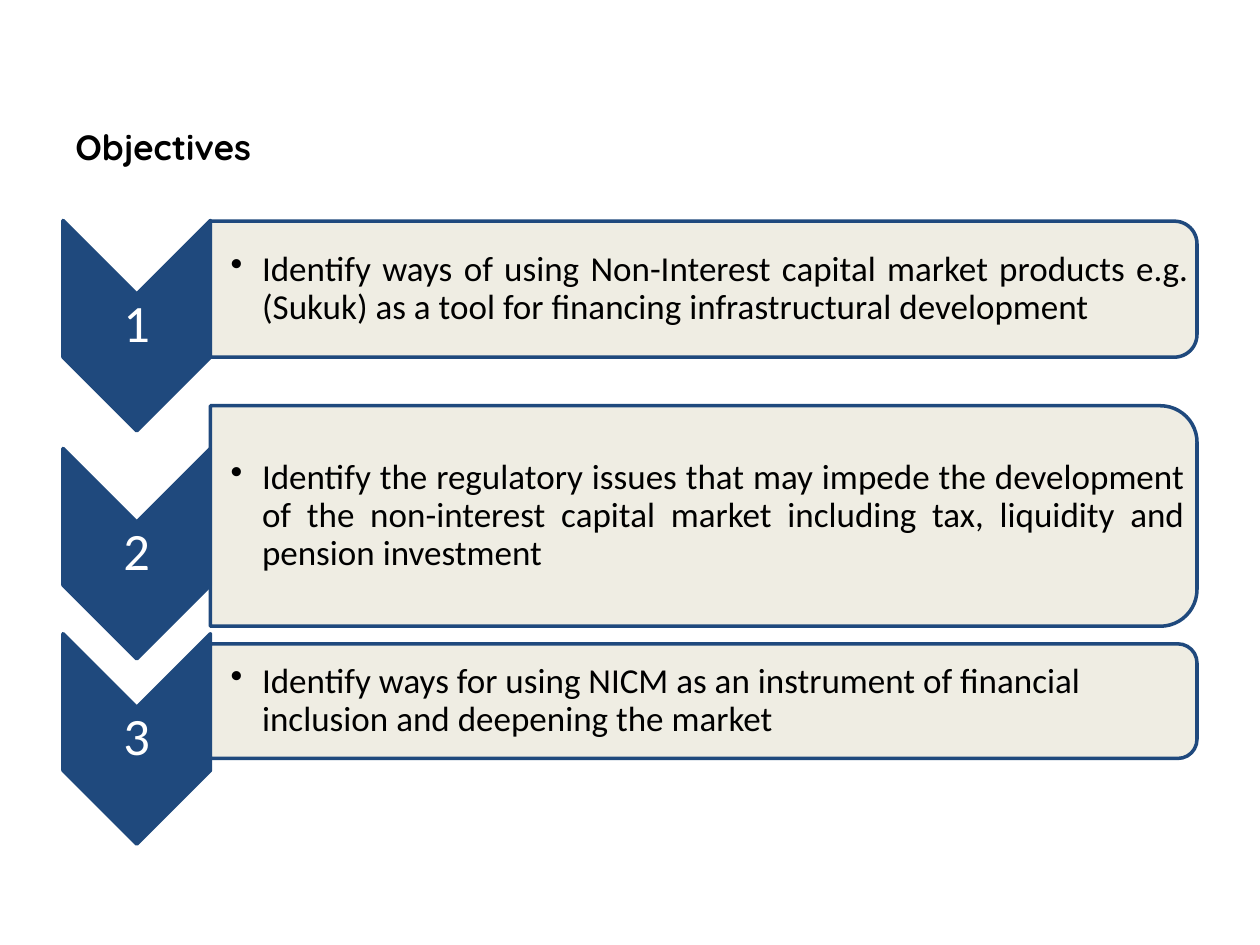
from lxml import etree
from pptx import Presentation
from pptx.dml.color import RGBColor
from pptx.enum import shapes, text
from pptx.oxml.ns import qn
from pptx import util as u

COLS, ROWS = 100, 75
NAVY, CREAM, WHITE, BLACK = "1F497D", "EEECE1", "FFFFFF", "000000"
NUMBER = {"size": u.Pt(30), "name": "Calibri"}
BODY = {"size": u.Pt(20), "name": "Calibri"}
HEADING = {"size": u.Pt(20), "name": "Quicksand", "bold": True}
LEFT, CHEVRON_W, CHEVRON_H, PANEL_W = 5, 11.7, 16.7, 78.3
JUSTIFY, PLAIN = text.PP_ALIGN.JUSTIFY, text.PP_ALIGN.LEFT

OBJECTIVES = [
    (17.5, 17.55, 10.8, JUSTIFY,
     "Identify ways of using Non-Interest capital market products e.g. "
     "(Sukuk) as a tool for financing infrastructural development"),
    (35.6, 32.2, 17.5, JUSTIFY,
     "Identify the regulatory issues that may impede the development of the "
     "non-interest capital market including tax, liquidity and pension investment"),
    (50.3, 51.1, 9.1, PLAIN,
     "Identify ways for using NICM as an instrument of financial inclusion "
     "and deepening the market"),
]


def rgb(value):
    return RGBColor.from_string(value)


class Deck:
    def __init__(self, prs):
        self.s = prs.slides.add_slide(prs.slide_layouts[6])
        self.col = prs.slide_width / COLS
        self.row = prs.slide_height / ROWS

    def box(self, x, y, w, h):
        return [round(v) for v in (x * self.col, y * self.row, w * self.col, h * self.row)]

    def turned(self, kind, x, y, w, h, fill, alpha=None):
        left, top = x + (w - h) / 2, y + (h - w) / 2
        sp = self.s.shapes.add_shape(kind, *self.box(left, top, h, w))
        sp.rotation = 90
        sp.shadow.inherit = False
        sp.fill.solid()
        sp.fill.fore_color.rgb = rgb(fill)
        sp.line.color.rgb = rgb(NAVY)
        sp.line.width = u.Pt(2)
        if alpha:
            clr = sp.fill._xPr.find(qn("a:solidFill"))[0]
            etree.SubElement(clr, qn("a:alpha"), val=str(alpha * 1000))

    def label(self, words, x, y, w, h, font, color, align=PLAIN,
              insets=(0.1, 0.05, 0.1, 0.05), spacing=1.0, bullet=False):
        tf = self.s.shapes.add_textbox(*self.box(x, y, w, h)).text_frame
        tf.word_wrap = True
        tf.vertical_anchor = text.MSO_ANCHOR.MIDDLE
        for side, inset in zip(("left", "top", "right", "bottom"), insets):
            setattr(tf, f"margin_{side}", u.Inches(inset))
        p = tf.paragraphs[0]
        p.alignment = align
        p.line_spacing = spacing
        if bullet:
            pPr = p._p.get_or_add_pPr()
            pPr.set("marL", str(u.Inches(0.25)))
            pPr.set("indent", str(u.Inches(-0.25)))
            etree.SubElement(pPr, qn("a:buChar"), char="•")
        r = p.add_run()
        r.text = words
        r.font.color.rgb = rgb(color)
        for key, value in font.items():
            setattr(r.font, key, value)

    def marker(self, number, y):
        self.turned(shapes.MSO_SHAPE.CHEVRON, LEFT, y, CHEVRON_W, CHEVRON_H, NAVY)
        self.label(str(number), LEFT, y + CHEVRON_W / 2, CHEVRON_W, CHEVRON_H - CHEVRON_W,
                   NUMBER, WHITE, text.PP_ALIGN.CENTER, (0.02,) * 4, 0.9)

    def panel(self, words, y, h, align):
        x, pad = LEFT + CHEVRON_W, h * 0.05
        self.turned(shapes.MSO_SHAPE.ROUND_2_SAME_RECTANGLE, x, y, PANEL_W, h, CREAM, 90)
        self.label(words, x, y + pad, PANEL_W - pad, h - 2 * pad,
                   BODY, BLACK, align, (0.16, 0.01, 0.01, 0.01), 0.9, True)


def main():
    prs = Presentation()
    prs.slide_width, prs.slide_height = u.Inches(10), u.Inches(7.5)
    deck = Deck(prs)
    deck.label("Objectives", LEFT, 7.7, 90, 7.8, HEADING, BLACK)
    for number, (marker_y, panel_y, h, align, words) in enumerate(OBJECTIVES, 1):
        deck.marker(number, marker_y)
        deck.panel(words, panel_y, h, align)
    prs.save("out.pptx")


if __name__ == "__main__":
    main()
